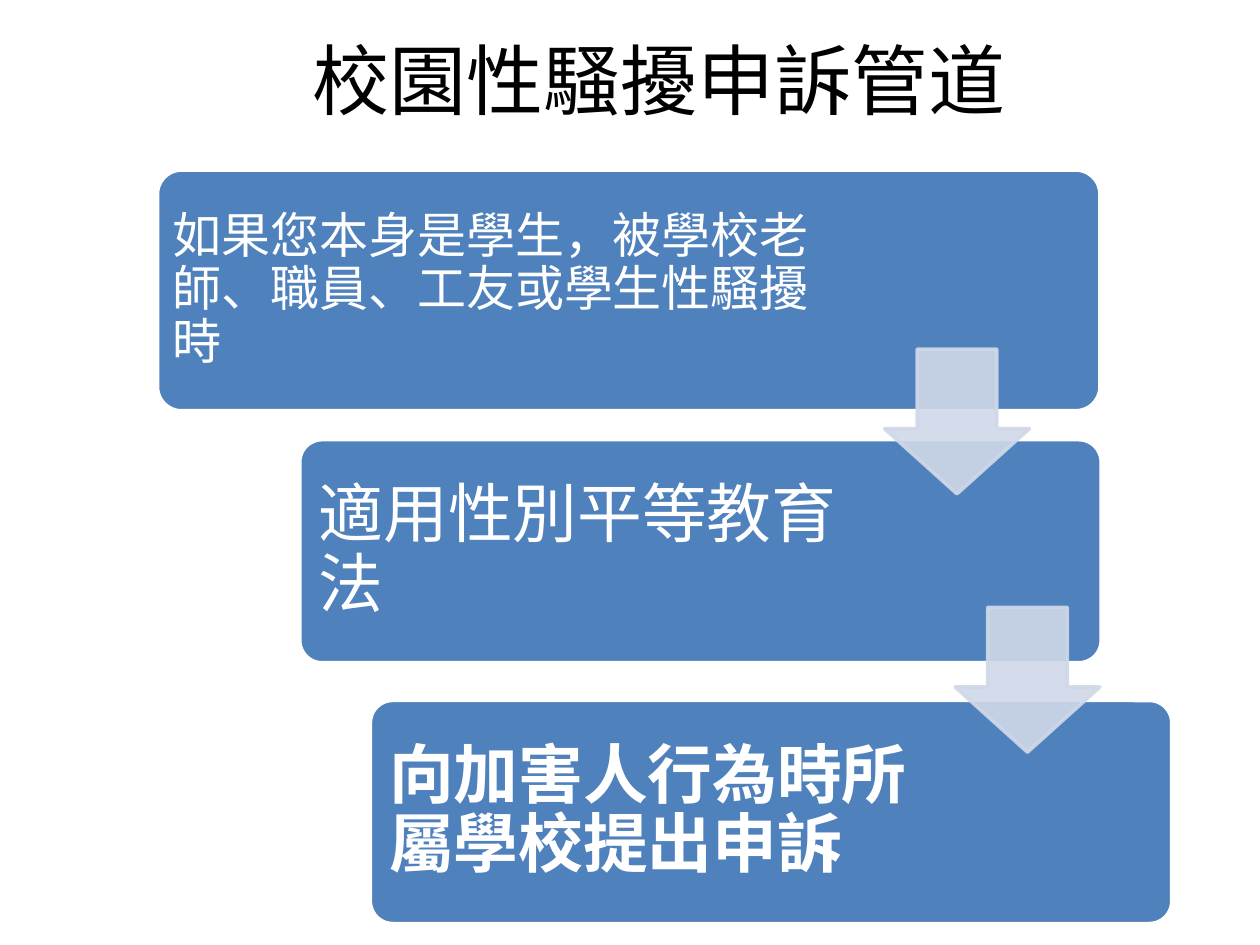
from lxml.etree import SubElement
from pptx import Presentation
from pptx.dml.color import RGBColor
from pptx.enum.shapes import MSO_SHAPE as Shape
from pptx.enum.text import MSO_ANCHOR as Anchor, PP_ALIGN as Align
from pptx.oxml.ns import qn
from pptx.util import Inches, Pt

FONT = "Noto Sans CJK SC"
COLORS = {"title": "000000", "step": "4F81BD", "white": "FFFFFF", "arrow": "D0D8E8"}
STEPS = [
    ((1.25, 1.35, 7.48, 1.91), 5.35,
     "如果您本身是學生，被學校老師、職員、工友或學生性騷擾時",
     {"size": 28, "inset": 0.12}),
    ((2.38, 3.49, 6.36, 1.77), 4.65, "適用性別平等教育法", {"size": 37}),
    ((2.94, 5.56, 6.36, 1.77), 4.65, "向加害人行為時所屬學校提出申訴",
     {"size": 37, "bold": True}),
]
ARROW_SIZE = 1.15
ARROW_CORNERS = [(7.02, 2.77), (7.58, 4.82)]


def add_text(slide, box, text, size, color="white", bold=False, align=Align.LEFT,
             inset=0.15, line_spacing=0.9, space_after=0):
    frame = slide.shapes.add_textbox(*map(Inches, box)).text_frame
    frame.word_wrap = True
    frame.vertical_anchor = Anchor.MIDDLE
    frame.margin_left = frame.margin_right = Inches(inset)
    frame.margin_top = frame.margin_bottom = Inches(inset)
    paragraph = frame.paragraphs[0]
    paragraph.alignment = align
    paragraph.line_spacing = line_spacing
    paragraph.space_after = Pt(space_after)
    run = paragraph.add_run()
    run.text = text
    run.font.size = Pt(size)
    run.font.bold = bold
    run.font.name = FONT
    run.font.color.rgb = RGBColor.from_string(COLORS[color])
    SubElement(run.font._element, qn("a:ea"), typeface=FONT)


def add_block(slide, kind, box, fill, line, adjustments):
    block = slide.shapes.add_shape(kind, *map(Inches, box))
    block.shadow.inherit = False
    block.fill.solid()
    block.fill.fore_color.rgb = RGBColor.from_string(COLORS[fill])
    block.line.color.rgb = RGBColor.from_string(COLORS[line])
    block.line.width = Pt(2)
    for index, value in enumerate(adjustments):
        block.adjustments[index] = value
    return block


def add_title(slide, box):
    add_text(slide, box, "校園性騷擾申訴管道", size=44, color="title",
             align=Align.CENTER, inset=0.1, line_spacing=1.0)


def add_step(slide, box, text_width, text, style):
    left, top, _, height = box
    add_block(slide, Shape.ROUNDED_RECTANGLE, box, "step", "white", [0.1])
    add_text(slide, (left, top, text_width, height), text,
             space_after=style["size"] * 0.35, **style)


def add_arrow(slide, box):
    arrow = add_block(slide, Shape.DOWN_ARROW, box, "arrow", "arrow", [0.55, 0.45])
    for color in arrow._element.spPr.iter(qn("a:srgbClr")):
        SubElement(color, qn("a:alpha"), val="90000")


def main():
    deck = Presentation()
    deck.slide_width, deck.slide_height = Inches(10), Inches(7.5)
    slide = deck.slides.add_slide(deck.slide_layouts[6])
    add_title(slide, (0.98, 0, 8.5, 1.25))
    for step in STEPS:
        add_step(slide, *step)
    for corner in ARROW_CORNERS:
        add_arrow(slide, (*corner, ARROW_SIZE, ARROW_SIZE))
    deck.save("out.pptx")


if __name__ == "__main__":
    main()
